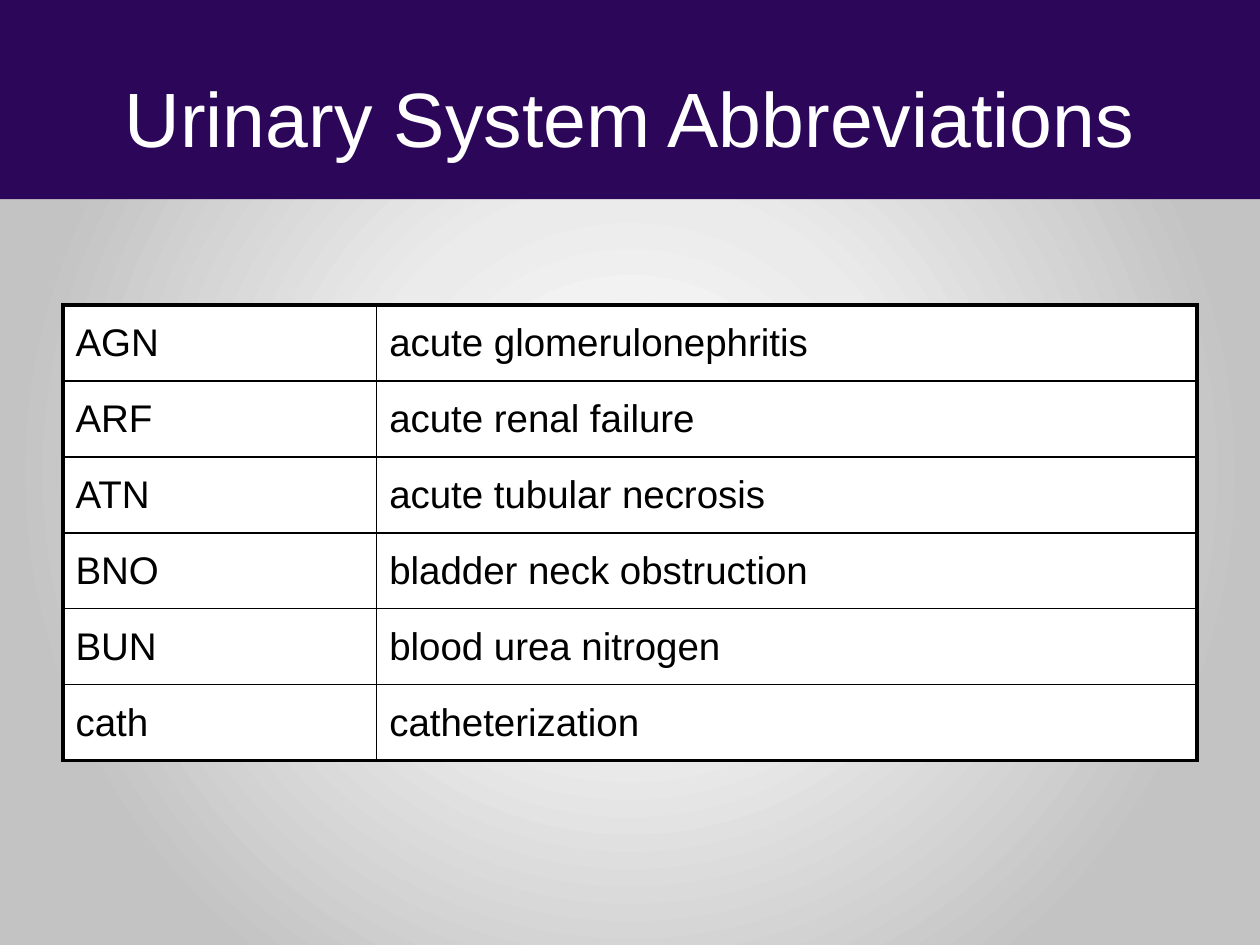
from dataclasses import dataclass

from pptx import Presentation
from pptx.dml.color import RGBColor
from pptx.enum.shapes import MSO_SHAPE
from pptx.enum.text import MSO_ANCHOR, PP_ALIGN
from pptx.oxml import parse_xml
from pptx.oxml.ns import nsdecls, qn
from pptx.util import Inches, Pt

RECT = MSO_SHAPE.RECTANGLE
MIDDLE = MSO_ANCHOR.MIDDLE
CENTER = PP_ALIGN.CENTER

WIDE, HIGH = 10, 7.5
FONT = "Arial"
PURPLE, WHITE, BLACK = "2C0659", "FFFFFF", "000000"
STOPS = ((2, WHITE), (35, "EBEBEB"), (79, "C3C3C3"))
COLS = (2.49, 6.51)
ROW = 0.603
THICK, THIN = 2.25, 1


@dataclass
class Term:
    short: str
    full: str


TERMS = [
    Term("AGN", "acute glomerulonephritis"),
    Term("ARF", "acute renal failure"),
    Term("ATN", "acute tubular necrosis"),
    Term("BNO", "bladder neck obstruction"),
    Term("BUN", "blood urea nitrogen"),
    Term("cath", "catheterization"),
]


def color(code: str) -> RGBColor:
    return RGBColor.from_string(code)


def place(shape, left: float, top: float, width: float, height: float) -> None:
    shape.left, shape.top = Inches(left), Inches(top)
    shape.width, shape.height = Inches(width), Inches(height)


def add_run(para, text: str, size: float, code: str) -> None:
    run = para.add_run()
    run.text = text
    run.font.name = FONT
    run.font.size = Pt(size)
    run.font.color.rgb = color(code)


def set_back(slide) -> None:
    """Fill the slide with a gradient that spreads from its centre."""
    slide.background.fill.gradient()
    old = slide.element.find(".//" + qn("a:gradFill"))
    stops = "".join(
        f'<a:gs pos="{pos * 1000}"><a:srgbClr val="{code}"/></a:gs>'
        for pos, code in STOPS
    )
    new = parse_xml(
        f'<a:gradFill {nsdecls("a")} rotWithShape="1"><a:gsLst>{stops}</a:gsLst>'
        '<a:path path="circle"><a:fillToRect l="50000" t="50000" r="50000" '
        'b="50000"/></a:path></a:gradFill>'
    )
    old.getparent().replace(old, new)


def add_head(slide) -> None:
    """Draw the band and set the title over it."""
    band = slide.shapes.add_shape(RECT, 0, 0, Inches(WIDE), Inches(1.58))
    band.shadow.inherit = False
    band.fill.solid()
    band.fill.fore_color.rgb = color(PURPLE)
    band.line.fill.background()
    slide.shapes.element.insert(2, band.element)

    title = slide.shapes.title
    place(title, 0.05 * WIDE, 0.04 * HIGH, 0.9 * WIDE, 1.25)
    title.text_frame.vertical_anchor = MIDDLE
    para = title.text_frame.paragraphs[0]
    para.alignment = CENTER
    add_run(para, "Urinary System Abbreviations", 44, WHITE)


def set_edges(cell, edges: dict[str, float]) -> None:
    props = cell._tc.get_or_add_tcPr()
    for spot, (side, width) in enumerate(edges.items()):
        props.insert(spot, parse_xml(
            f'<a:ln{side} {nsdecls("a")} w="{Pt(width)}"><a:solidFill>'
            f'<a:srgbClr val="{BLACK}"/></a:solidFill></a:ln{side}>'
        ))


def fill_cell(cell, text: str, edges: dict[str, float]) -> None:
    cell.fill.solid()
    cell.fill.fore_color.rgb = color(WHITE)
    cell.vertical_anchor = MIDDLE
    para = cell.text_frame.paragraphs[0]
    para._p.get_or_add_pPr().append(parse_xml(
        f'<a:spcBef {nsdecls("a")}><a:spcPct val="20000"/></a:spcBef>'
    ))
    add_run(para, text, 22, BLACK)
    set_edges(cell, edges)


def add_terms(slide) -> None:
    """Thick lines go round the table, thin ones between its cells."""
    rows, cols = len(TERMS), len(COLS)
    frame = slide.shapes.add_table(
        rows, cols, Inches(0.05 * WIDE), Inches(2.42),
        Inches(sum(COLS)), Inches(rows * ROW),
    )
    table = frame.table
    table.first_row = table.horz_banding = False
    for col, width in zip(table.columns, COLS):
        col.width = Inches(width)
    for r, term in enumerate(TERMS):
        table.rows[r].height = Inches(ROW)
        for c, text in enumerate((term.short, term.full)):
            outer = {"L": c == 0, "R": c == cols - 1,
                     "T": r == 0, "B": r == rows - 1}
            edges = {side: THICK if out else THIN for side, out in outer.items()}
            fill_cell(table.cell(r, c), text, edges)


def main() -> None:
    deck = Presentation()
    deck.slide_width, deck.slide_height = Inches(WIDE), Inches(HIGH)
    slide = deck.slides.add_slide(deck.slide_layouts.get_by_name("Title Only"))
    set_back(slide)
    add_head(slide)
    add_terms(slide)
    deck.save("out.pptx")


if __name__ == "__main__":
    main()
